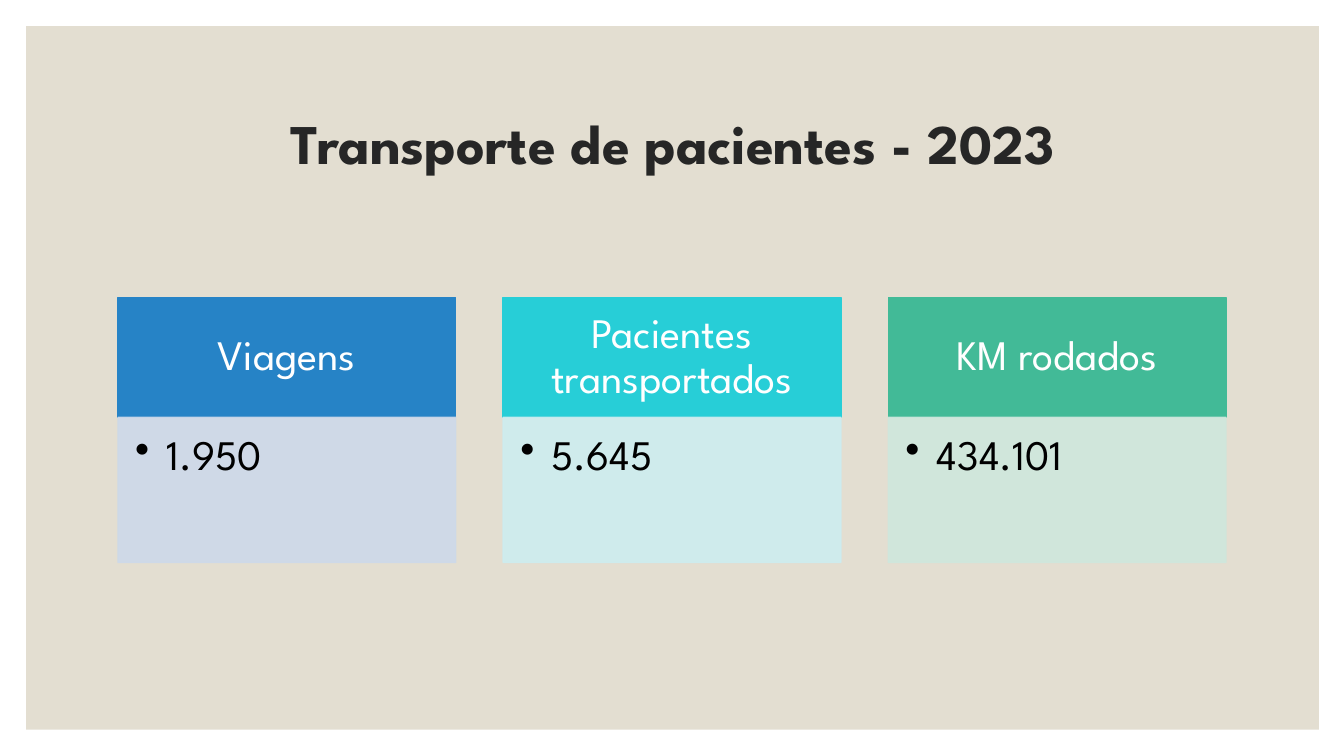
from lxml.etree import SubElement
from pptx import Presentation
from pptx.dml.color import RGBColor
from pptx.enum.shapes import MSO_SHAPE as Shape
from pptx.enum.text import MSO_ANCHOR as Anchor, MSO_AUTO_SIZE as AutoSize, PP_ALIGN as Align
from pptx.oxml.ns import qn
from pptx.util import Inches, Pt

FONT = "League Spartan"
SAND = RGBColor(0xE3, 0xDE, 0xD1)
CHARCOAL = RGBColor(0x26, 0x26, 0x26)
WHITE = RGBColor(0xFF, 0xFF, 0xFF)
BLACK = RGBColor(0x00, 0x00, 0x00)
BLUE = RGBColor(0x26, 0x83, 0xC6)
PALE_BLUE = RGBColor(0xCD, 0xD9, 0xEA)
CYAN = RGBColor(0x27, 0xCE, 0xD7)
PALE_CYAN = RGBColor(0xCD, 0xED, 0xF0)
GREEN = RGBColor(0x42, 0xBA, 0x97)
PALE_GREEN = RGBColor(0xCF, 0xE7, 0xDD)

# Heading, value, heading colour, body colour
INDICATORS = [
    ("Viagens", "1.950", BLUE, PALE_BLUE),
    ("Pacientes transportados", "5.645", CYAN, PALE_CYAN),
    ("KM rodados", "434.101", GREEN, PALE_GREEN),
]
LEFT, TOP, WIDTH, STEP = 1.17, 2.95, 3.35, 3.82
HEADING_HEIGHT, BODY_HEIGHT = 1.19, 1.44


def add_box(slide, left, top, width, height, color):
    shape = slide.shapes.add_shape(
        Shape.RECTANGLE, Inches(left), Inches(top), Inches(width), Inches(height))
    shape.shadow.inherit = False
    shape.fill.solid()
    shape.fill.fore_color.rgb = color
    shape.line.color.rgb = color
    shape.line.width = Pt(1)
    return shape


def write_text(shape, text, size, color, align, anchor, bold=False):
    text_frame = shape.text_frame
    text_frame.text = text
    text_frame.word_wrap = True
    text_frame.auto_size = AutoSize.NONE
    text_frame.vertical_anchor = anchor
    paragraph = text_frame.paragraphs[0]
    paragraph.alignment = align
    paragraph.line_spacing = 0.9
    font = paragraph.runs[0].font
    font.name, font.size, font.bold = FONT, Pt(size), bold
    font.color.rgb = color
    return paragraph


def set_margins(shape, left, top, right, bottom):
    text_frame = shape.text_frame
    text_frame.margin_left, text_frame.margin_top = Inches(left), Inches(top)
    text_frame.margin_right, text_frame.margin_bottom = Inches(right), Inches(bottom)


def set_opacity(shape, percent):
    for color in shape.element.spPr.iter(qn("a:srgbClr")):
        SubElement(color, qn("a:alpha"), val=str(percent * 1000))


def add_bullet(paragraph, indent):
    properties = paragraph._p.get_or_add_pPr()
    properties.set("marL", str(Inches(indent)))
    properties.set("indent", str(-Inches(indent)))
    SubElement(properties, qn("a:buChar"), char="•")


def add_indicator(slide, left, heading, value, color, pale_color):
    heading_box = add_box(slide, left, TOP, WIDTH, HEADING_HEIGHT, color)
    set_margins(heading_box, 0.23, 0.13, 0.23, 0.13)
    write_text(heading_box, heading, 30, WHITE, Align.CENTER, Anchor.MIDDLE)

    value_box = add_box(slide, left, TOP + HEADING_HEIGHT, WIDTH, BODY_HEIGHT, pale_color)
    set_opacity(value_box, 90)
    set_margins(value_box, 0.17, 0.17, 0.23, 0.26)
    paragraph = write_text(value_box, value, 30, BLACK, Align.LEFT, Anchor.TOP)
    add_bullet(paragraph, 0.31)


def add_title(slide, text):
    title = slide.shapes.title
    title.left, title.top = Inches(LEFT), Inches(0.7)
    title.width, title.height = Inches(11), Inches(1.5)
    write_text(title, text, 40, CHARCOAL, Align.CENTER, Anchor.MIDDLE, bold=True)


def main():
    presentation = Presentation()
    presentation.slide_width = Inches(13.33)
    presentation.slide_height = Inches(7.5)
    slide = presentation.slides.add_slide(presentation.slide_layouts[5])

    # Sand panel, placed behind the title
    panel = add_box(slide, 0.26, 0.26, 12.82, 6.98, SAND)
    panel.line.fill.background()
    slide.shapes.title.element.addprevious(panel.element)

    add_title(slide, "Transporte de pacientes - 2023")

    # Three indicator columns
    for column, indicator in enumerate(INDICATORS):
        add_indicator(slide, LEFT + column * STEP, *indicator)

    presentation.save("out.pptx")


if __name__ == "__main__":
    main()
